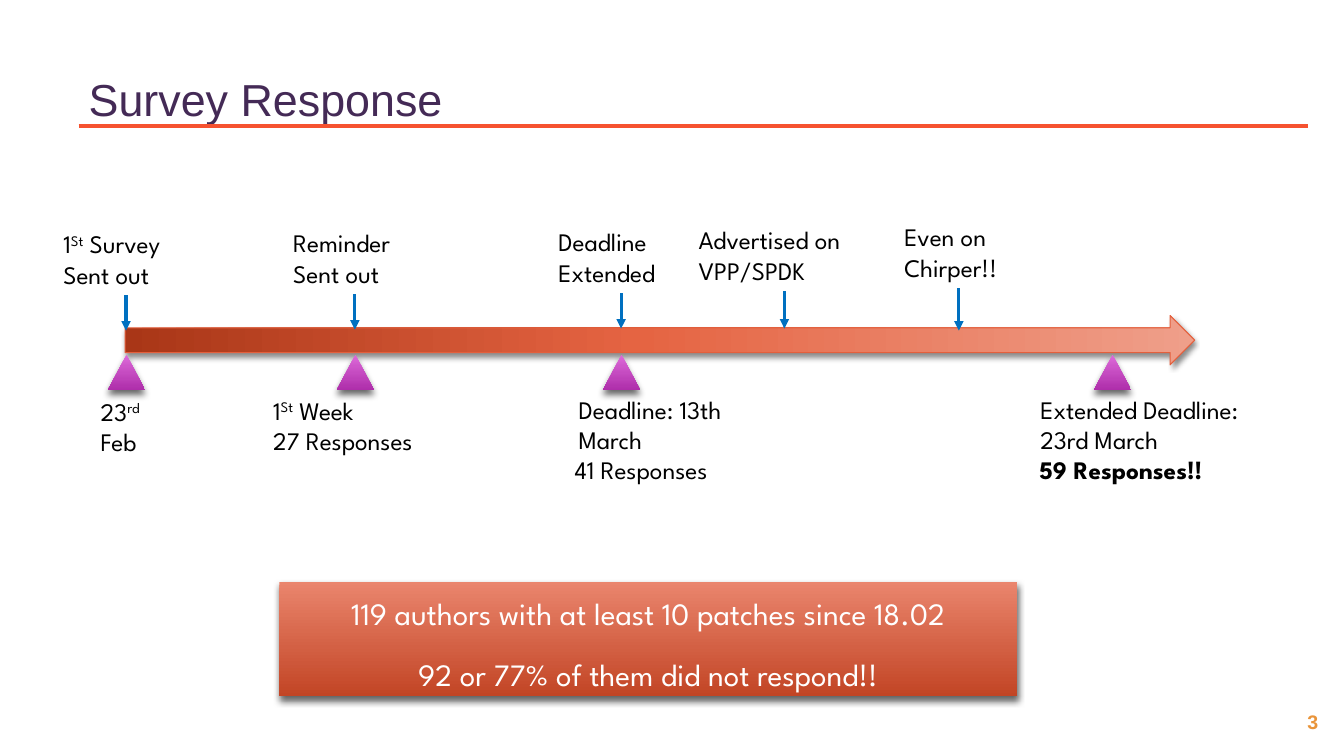
import pptx
import pptx.dml.color
import pptx.enum.shapes
import pptx.enum.text
import pptx.oxml
import pptx.oxml.ns
import pptx.util

Inches = pptx.util.Inches
Pt = pptx.util.Pt
SHAPES = pptx.enum.shapes.MSO_SHAPE
ALIGN = pptx.enum.text.PP_ALIGN
ANCHOR = pptx.enum.text.MSO_ANCHOR

COLORS = {
    "title": "442A56",
    "rule": "F65230",
    "text": "000000",
    "white": "FFFFFF",
    "number": "E9943A",
    "pointer": "0070C0",
    "timeline": "E45F3C",
}
TIMELINE_STOPS = [(0, "A93617"), (48, "E56442"), (100, "EF9F8A")]
MARKER_STOPS = [(0, "DD6AD9"), (100, "AE2EAA")]
BANNER_STOPS = [(0, "EA856D"), (100, "C24525")]
LABEL = {"name": "League Spartan", "size": Pt(18)}
BOLD_LABEL = {**LABEL, "bold": True}
SUPERSCRIPT = "30000"

MARKER_CENTERS = [1.25, 3.52, 6.16, 11.03]
POINTERS = [
    (1.25, 2.93, 3.28),
    (3.52, 2.92, 3.27),
    (6.16, 2.91, 3.26),
    (7.78, 2.89, 3.26),
    (9.51, 2.86, 3.28),
]
LABELS = [
    ((0.53, 2.22, 1.43, 0.71), ["1^St^ Survey Sent out"], LABEL),
    ((2.81, 2.21, 1.43, 0.71), ["Reminder Sent out"], LABEL),
    ((5.44, 2.2, 1.43, 0.71), ["Deadline Extended"], LABEL),
    ((6.83, 2.18, 1.9, 0.71), ["Advertised on VPP/SPDK"], LABEL),
    ((8.87, 2.15, 1.29, 0.71), ["Even on Chirper!!"], LABEL),
    ((0.9, 3.88, 0.7, 0.71), ["23^rd^ Feb"], LABEL),
    ((2.61, 3.87, 1.84, 0.71), ["1^St^ Week", "27 Responses"], LABEL),
    ((5.64, 3.86, 1.68, 0.71), ["Deadline: 13th March"], LABEL),
    ((5.6, 4.46, 1.84, 0.4), ["41 Responses"], LABEL),
    ((10.22, 3.86, 2.66, 0.71), ["Extended Deadline: 23rd March"], LABEL),
    ((10.21, 4.46, 1.96, 0.4), ["59 Responses!!"], BOLD_LABEL),
]


def rgb(color):
    return pptx.dml.color.RGBColor.from_string(COLORS[color])


def apply(target, values):
    for name, value in values.items():
        setattr(target, name, value)


def element(tag, **attributes):
    node = pptx.oxml.parse_xml(f"<a:{tag} {pptx.oxml.ns.nsdecls('a')}/>")
    for name, value in attributes.items():
        node.set(name, str(value))
    return node


def colored(node, color, alpha=None):
    fill = element("srgbClr", val=color)
    if alpha is not None:
        fill.append(element("alpha", val=alpha * 1000))
    node.append(fill)
    return node


def write(frame, lines, font, color, paragraph_format=None):
    for index, line in enumerate(lines):
        para = frame.paragraphs[0] if index == 0 else frame.add_paragraph()
        apply(para, paragraph_format or {})
        if index == 0:
            para.space_before = Pt(0)
        for position, part in enumerate(line.split("^")):
            span = para.add_run()
            span.text = part
            apply(span.font, font)
            span.font.color.rgb = rgb(color)
            if position % 2:
                span.font._element.set("baseline", SUPERSCRIPT)


def add_label(page, place, lines, font, color="text", paragraph_format=None):
    box = page.shapes.add_textbox(*map(Inches, place))
    box.text_frame.word_wrap = True
    write(box.text_frame, lines, font, color, paragraph_format)


def add_line(page, start, end, color, arrow=False):
    kind = pptx.enum.shapes.MSO_CONNECTOR.STRAIGHT
    line = page.shapes.add_connector(kind, *map(Inches, start + end))
    line.line.width = Pt(2.25)
    line.line.color.rgb = rgb(color)
    if arrow:
        line.line._get_or_add_ln().append(element("tailEnd", type="triangle"))
    line._element.spPr.append(element("effectLst"))


def add_gradient_shape(page, kind, place, stops, angle, shadow):
    shape = page.shapes.add_shape(kind, *map(Inches, place))
    shape.line.fill.background()
    shape.fill.gradient()
    shape.fill.gradient_angle = angle
    stop_list = shape._element.spPr.find(".//" + pptx.oxml.ns.qn("a:gsLst"))
    for old_stop in list(stop_list):
        stop_list.remove(old_stop)
    for position, color in stops:
        stop_list.append(colored(element("gs", pos=position * 1000), color))
    shape.shadow.inherit = False
    alpha, blur, distance = shadow
    effects = shape._element.spPr.find(pptx.oxml.ns.qn("a:effectLst"))
    outer = element("outerShdw", blurRad=Pt(blur), dist=Pt(distance),
                    dir=5400000, algn="ctr", rotWithShape=0)
    effects.append(colored(outer, COLORS["text"], alpha))
    return shape


def add_title(page):
    title = page.shapes.title
    apply(title, {"left": Inches(0.78), "top": Inches(0.59),
                  "width": Inches(8.64), "height": Inches(0.77)})
    title.text_frame.vertical_anchor = ANCHOR.MIDDLE
    write(title.text_frame, ["Survey Response"],
          {"name": "Arial", "size": Pt(32)}, "title", {"alignment": ALIGN.LEFT})
    add_line(page, (0.78, 1.25), (12.97, 1.25), "rule")


def add_timeline(page):
    timeline = add_gradient_shape(page, SHAPES.RIGHT_ARROW, (1.24, 3.13, 10.61, 0.49),
                                  TIMELINE_STOPS, 0, (45, 3, 2))
    timeline.line.color.rgb = rgb("timeline")
    timeline.line.width = Pt(0.75)
    for center in MARKER_CENTERS:
        add_gradient_shape(page, SHAPES.ISOSCELES_TRIANGLE,
                           (center - 0.18, 3.52, 0.37, 0.35),
                           MARKER_STOPS, 270, (60, 5, 3))
    for x, top, bottom in POINTERS:
        add_line(page, (x, top), (x, bottom), "pointer", arrow=True)
    for place, lines, font in LABELS:
        add_label(page, place, lines, font)


def add_banner(page):
    banner = add_gradient_shape(page, SHAPES.RECTANGLE, (2.77, 5.77, 7.32, 1.14),
                                BANNER_STOPS, 270, (60, 5, 3))
    apply(banner.text_frame, {"word_wrap": True, "vertical_anchor": ANCHOR.TOP,
                              "margin_top": Inches(0.05)})
    write(banner.text_frame,
          ["119 authors with at least 10 patches since 18.02",
           "92 or 77% of them did not respond!!"],
          {"name": "League Spartan", "size": Pt(22.2)}, "white",
          {"alignment": ALIGN.CENTER, "line_spacing": 1.2,
           "space_before": Pt(6), "space_after": Pt(6)})


def main():
    deck = pptx.Presentation()
    apply(deck, {"slide_width": Inches(13.33), "slide_height": Inches(7.5)})
    page = deck.slides.add_slide(deck.slide_layouts[5])
    add_title(page)
    add_timeline(page)
    add_banner(page)
    add_label(page, (12.71, 6.99, 0.62, 0.34), ["3"],
              {"name": "Arial", "size": Pt(14), "bold": True}, "number",
              {"alignment": ALIGN.CENTER})
    deck.save("out.pptx")


if __name__ == "__main__":
    main()
